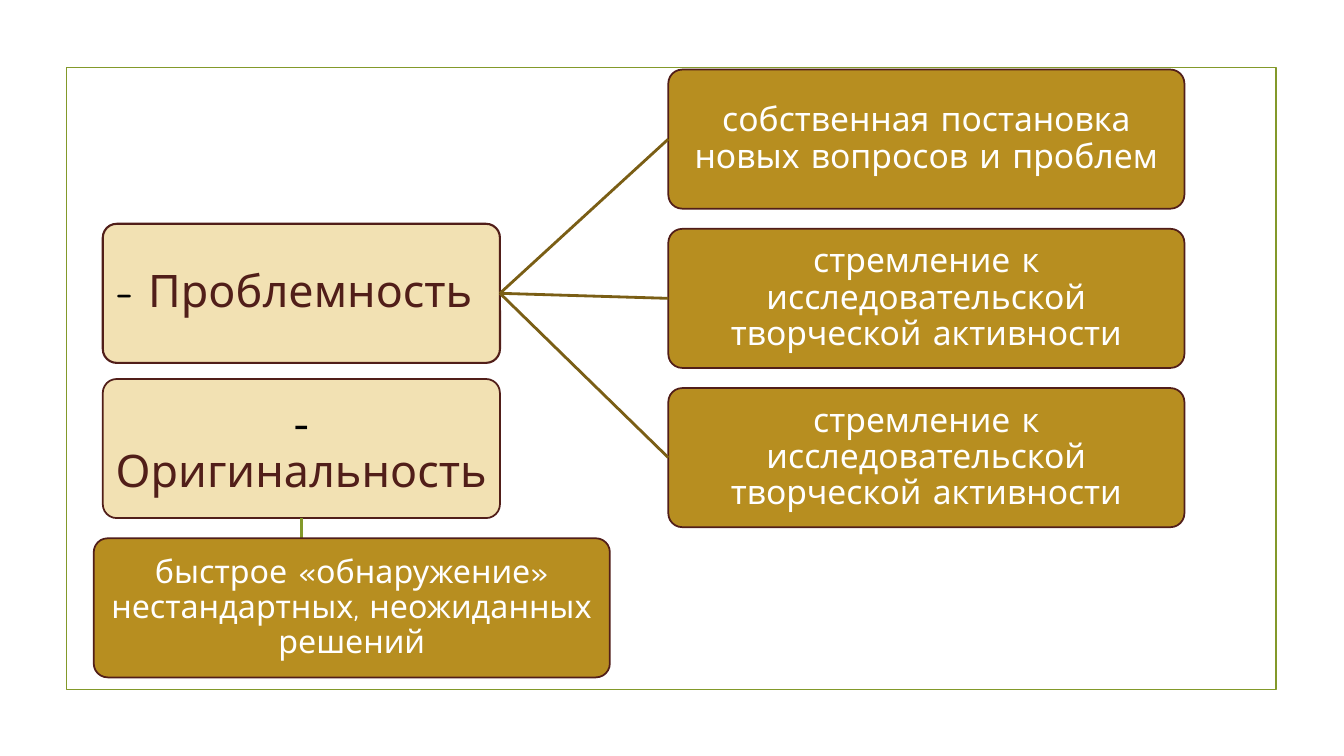
"""Build a slide that links two traits of creative thinking to their signs."""
from dataclasses import dataclass

from lxml import etree
from pptx import Presentation
from pptx import util as u
from pptx.dml import color
from pptx.enum import shapes, text
from pptx.oxml import ns

COLUMN = ROW = u.Inches(0.1)
COLUMNS, ROWS = 133.33, 75
BOX_ROWS = 13.8
SIGN_LEFT, SIGN_TOP, SIGN_STEP = 66.3, 6.9, 15.8
TRAIT_LEFT, TRAIT_TOP, TRAIT_STEP = 10.2, 22.2, 15.4
TRAIT_WIDTH, SIGN_WIDTH = 39.4, 51.2
BOTTOM, LEFT, RIGHT = 2, 1, 3
FONT = "Comic Neue"
COLORS = {
    "frame": "83992A",
    "outline": "511E19",
    "trait": "F2E1B3",
    "sign": "B78E20",
    "branch": "7A5E15",
    "dash": "000000",
    "white": "FFFFFF",
}


@dataclass
class Box:
    """A rounded box placed in grid columns and rows."""
    left: float
    top: float
    width: float
    fill: str
    outline_width: float = 1.25


def rgb(name: str) -> color.RGBColor:
    """Return the palette colour with this name."""
    return color.RGBColor.from_string(COLORS[name])


def draw_shape(slide, preset, left: float, top: float, width: float,
               height: float, outline: str, outline_width: float):
    """Draw an outlined shape without fill or shadow."""
    shape = slide.shapes.add_shape(
        preset, round(left * COLUMN), round(top * ROW),
        round(width * COLUMN), round(height * ROW))
    shape.shadow.inherit = False
    shape.fill.background()
    shape.line.color.rgb = rgb(outline)
    shape.line.width = u.Pt(outline_width)
    return shape


def draw_box(slide, box: Box):
    """Draw a rounded box ready for centred text."""
    shape = draw_shape(slide, shapes.MSO_SHAPE.ROUNDED_RECTANGLE, box.left, box.top,
                       box.width, BOX_ROWS, "outline", box.outline_width)
    shape.adjustments[0] = 0.1
    shape.fill.solid()
    shape.fill.fore_color.rgb = rgb(box.fill)
    frame = shape.text_frame
    frame.word_wrap = True
    frame.vertical_anchor = text.MSO_ANCHOR.MIDDLE
    frame.margin_left = frame.margin_right = u.Inches(0.02)
    frame.margin_top = frame.margin_bottom = u.Inches(0.02)
    frame.paragraphs[0].alignment = text.PP_ALIGN.CENTER
    frame.paragraphs[0].line_spacing = 0.9
    return shape


def write(shape, words: str, *, size: float, ink: str, font: str = FONT) -> None:
    """Add formatted words to the paragraph of a box."""
    run = shape.text_frame.paragraphs[0].add_run()
    run.text = words
    run.font.size = u.Pt(size)
    run.font.name = font
    run.font.color.rgb = rgb(ink)


def draw_link(slide, start, site: int, end_x: int, end_y: int, ink: str, width: float):
    """Draw a line from a side of a box to a point."""
    link = slide.shapes.add_connector(shapes.MSO_CONNECTOR.STRAIGHT, 0, 0, end_x, end_y)
    link.begin_connect(start, site)
    link.line.color.rgb = rgb(ink)
    link.line.width = u.Pt(width)
    etree.SubElement(link._element.spPr, ns.qn("a:effectLst"))
    return link


def draw_trait(slide, row: int, name: str, dash_font: str, outline_width: float):
    """Draw a trait box with a dash before its name."""
    trait = draw_box(slide, Box(TRAIT_LEFT, TRAIT_TOP + row * TRAIT_STEP, TRAIT_WIDTH,
                                "trait", outline_width))
    write(trait, "- ", size=32, ink="dash", font=dash_font)
    write(trait, name, size=32, ink="outline")
    return trait


def draw_sign(slide, left: float, top: float, words: str, size: float):
    """Draw a box that describes a sign of a trait."""
    sign = draw_box(slide, Box(left, top, SIGN_WIDTH, "sign"))
    write(sign, words, size=size, ink="white")
    return sign


def main() -> None:
    """Build the slide and save it."""
    deck = Presentation()
    deck.slide_width = round(COLUMNS * COLUMN)
    deck.slide_height = ROWS * ROW
    slide = deck.slides.add_slide(deck.slide_layouts[6])
    draw_shape(slide, shapes.MSO_SHAPE.RECTANGLE, 6.6, 6.7, 120, 61.7, "frame", 1.25)

    problem = draw_trait(slide, 0, "Проблемность ", FONT, 1.5)
    problem_signs = [
        "собственная постановка новых вопросов и проблем",
        "стремление к исследовательской творческой активности",
        "стремление к исследовательской творческой активности",
    ]
    for row, words in enumerate(problem_signs):
        sign = draw_sign(slide, SIGN_LEFT, SIGN_TOP + row * SIGN_STEP, words, 24)
        branch = draw_link(slide, problem, RIGHT, sign.left, sign.top, "branch", 2)
        branch.end_connect(sign, LEFT)

    originality = draw_trait(slide, 1, "Оригинальность", "Times New Roman", 1.25)
    draw_link(slide, originality, BOTTOM, originality.left + originality.width // 2,
              round(55.5 * ROW), "frame", 2.25)
    draw_sign(slide, 9.3, 53.4,
              "быстрое «обнаружение» нестандартных, неожиданных решений", 23)
    deck.save("out.pptx")


if __name__ == "__main__":
    main()
